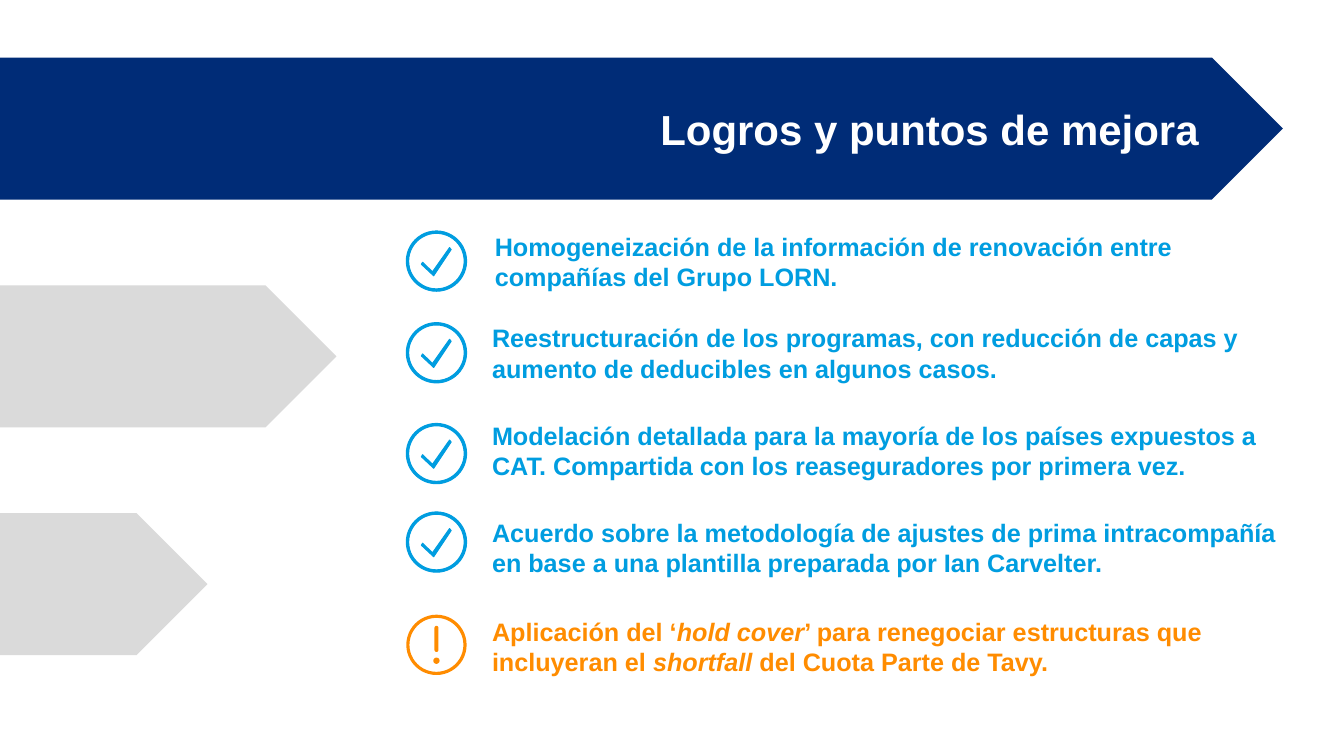
from pptx import Presentation
from pptx.dml.color import RGBColor
from pptx.enum.shapes import MSO_SHAPE
from pptx.enum.text import MSO_ANCHOR, PP_ALIGN
from pptx.util import Cm, Pt

PLATE = MSO_SHAPE.PENTAGON
DONUT = MSO_SHAPE.DONUT
OVAL = MSO_SHAPE.OVAL
ROUND = MSO_SHAPE.ROUNDED_RECTANGLE
TOP, MIDDLE = MSO_ANCHOR.TOP, MSO_ANCHOR.MIDDLE
LEFT = PP_ALIGN.LEFT

COLORS = {"navy": "002C77", "gray": "DADADA", "blue": "009DE0",
          "orange": "FF8C00", "white": "FFFFFF"}
FONT = "Arial"
SIZE = 1.52
EDGE = 32.26
TICK = [(0.69, 1.13), (0.38, 0.84), (0.41, 0.79),
        (0.66, 1.03), (1.09, 0.42), (1.13, 0.47)]
PLATES = [(32.33, "navy"), (8.48, "gray"), (5.23, "gray")]
ROWS = [
    (5.82, 5.82, 12.47, "blue",
     ["Homogeneización de la información de renovación entre compañías del Grupo LORN."]),
    (8.13, 8.13, 12.4, "blue",
     ["Reestructuración de los programas, con reducción de capas y aumento de deducibles en algunos casos."]),
    (10.67, 10.59, 12.4, "blue",
     ["Modelación detallada para la mayoría de los países expuestos a CAT. Compartida con los reaseguradores por primera vez."]),
    (12.9, 13.03, 12.4, "blue",
     ["Acuerdo sobre la metodología de ajustes de prima intracompañía en base a una plantilla preparada por Ian Carvelter."]),
    (15.49, 15.52, 12.4, "orange",
     ["Aplicación del ‘", "hold cover", "’ para renegociar estructuras que incluyeran el ",
      "shortfall", " del Cuota Parte de Tavy."]),
]


def rgb(name):
    return RGBColor.from_string(COLORS[name])


def paint(shape, color, edge=False):
    shape.shadow.inherit = False
    shape.fill.solid()
    shape.fill.fore_color.rgb = rgb(color)
    if edge:
        shape.line.color.rgb = rgb(color)
        shape.line.width = Pt(0.75)
    else:
        shape.line.fill.background()


def add_part(shapes, kind, x, y, w, h, color, edge=False):
    part = shapes.add_shape(kind, Cm(x), Cm(y), Cm(w), Cm(h))
    paint(part, color, edge)
    return part


def set_frame(frame, anchor):
    frame.word_wrap = True
    frame.vertical_anchor = anchor
    frame.margin_left = frame.margin_right = 0
    frame.margin_top = frame.margin_bottom = 0


def set_font(run, size, color):
    run.font.name = FONT
    run.font.size = Pt(size)
    run.font.bold = True
    run.font.color.rgb = rgb(color)


def add_plates(slide, x, y, step, h):
    for i, (w, color) in enumerate(PLATES):
        add_part(slide.shapes, PLATE, x, y + i * step, w, h, color)


def add_title(slide, x, y, w, h):
    title = slide.shapes.title
    title.left, title.top, title.width, title.height = Cm(x), Cm(y), Cm(w), Cm(h)
    title.element.getparent().append(title.element)
    frame = title.text_frame
    frame.text = "Logros y puntos de mejora"
    set_frame(frame, MIDDLE)
    line = frame.paragraphs[0]
    line.alignment = LEFT
    line.line_spacing = 0.8
    set_font(line.runs[0], 30, "white")


def add_ring(shapes, x, y, color, edge, thick):
    ring = add_part(shapes, DONUT, x, y, SIZE, SIZE, color, edge)
    ring.adjustments[0] = thick / SIZE


def add_check(slide, x, y):
    shapes = slide.shapes.add_group_shape().shapes
    add_ring(shapes, x, y, "blue", True, 0.06)
    spots = [(Cm(x + dx), Cm(y + dy)) for dx, dy in TICK]
    pen = shapes.build_freeform(*spots[0])
    pen.add_line_segments(spots[1:], close=True)
    paint(pen.convert_to_shape(), "blue", True)


def add_alert(slide, x, y):
    shapes = slide.shapes.add_group_shape().shapes
    add_ring(shapes, x, y, "orange", False, 0.08)
    mid = x + SIZE / 2
    bar = add_part(shapes, ROUND, mid - 0.05, y + 0.28, 0.1, 0.66, "orange")
    bar.adjustments[0] = 0.5
    add_part(shapes, OVAL, mid - 0.08, y + 1.08, 0.16, 0.16, "orange")


def add_point(slide, x, y, w, h, color, parts):
    box = slide.shapes.add_textbox(Cm(x), Cm(y), Cm(w), Cm(h))
    set_frame(box.text_frame, TOP)
    line = box.text_frame.paragraphs[0]
    for i, part in enumerate(parts):
        run = line.add_run()
        run.text = part
        set_font(run, 18, color)
        run.font.italic = i % 2 == 1


def add_rows(slide, x):
    for top, y, left, color, parts in ROWS:
        draw = add_check if color == "blue" else add_alert
        draw(slide, x, top)
        add_point(slide, left, y, EDGE - left, 1.54, color, parts)


def main():
    deck = Presentation()
    deck.slide_width, deck.slide_height = Cm(33.87), Cm(19.05)
    slide = deck.slides.add_slide(deck.slide_layouts[5])
    add_plates(slide, 0, 1.45, 5.74, 3.58)
    add_rows(slide, 10.24)
    add_title(slide, 16.64, 2.67, 14.05, 1.37)
    deck.save("out.pptx")


if __name__ == "__main__":
    main()
